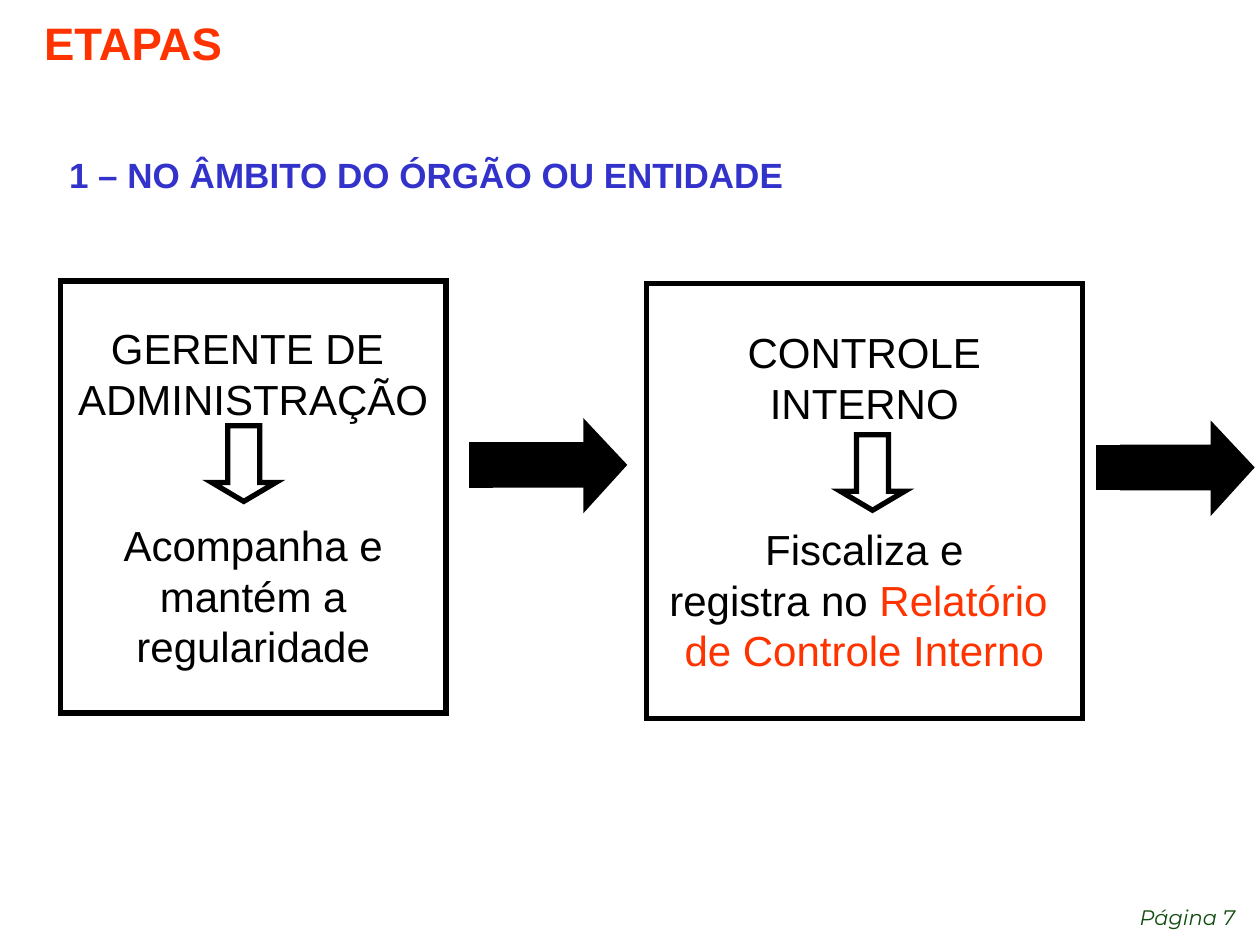
from lxml.etree import SubElement
from pptx import Presentation
from pptx.dml.color import RGBColor
from pptx.enum.shapes import MSO_SHAPE
from pptx.enum.text import MSO_ANCHOR, MSO_AUTO_SIZE, PP_ALIGN
from pptx.oxml.ns import qn
from pptx.util import Inches, Pt

theme = {
    "black": RGBColor.from_string("000000"),
    "red": RGBColor.from_string("FF3300"),
    "blue": RGBColor.from_string("3333CC"),
    "green": RGBColor.from_string("0F4C0E"),
    "title": Pt(26),
    "heading": Pt(20),
    "body": Pt(24),
    "page": Pt(12),
    "line": Pt(3),
    "gap": Pt(55),
}


def set_font(paragraph, size, color, name="Arial", bold=False, italic=False):
    font = paragraph.font
    font.name, font.size, font.bold, font.italic = name, size, bold, italic
    font.color.rgb = color


def outline(shape):
    shape.shadow.inherit = False
    shape.line.color.rgb = theme["black"]
    shape.line.width = theme["line"]
    SubElement(shape.line._get_or_add_ln(), qn("a:miter"), lim="800000")


prs = Presentation()
prs.slide_width, prs.slide_height = Inches(10), Inches(7.5)
slide = prs.slides.add_slide(prs.slide_layouts[5])
shapes = slide.shapes

title = shapes.title
title.left, title.top, title.width, title.height = Inches(0.25), Inches(0), Inches(8.08), Inches(0.67)
title.text_frame.text = "ETAPAS"
title.text_frame.vertical_anchor = MSO_ANCHOR.MIDDLE
title.text_frame.paragraphs[0].alignment = PP_ALIGN.LEFT
set_font(title.text_frame.paragraphs[0], theme["title"], theme["red"], bold=True)

page = shapes.add_textbox(Inches(8.33), Inches(7.09), Inches(1.57), Inches(0.32)).text_frame
page.word_wrap = True
page.text = "Página 7"
page.paragraphs[0].alignment = PP_ALIGN.RIGHT
page.paragraphs[0].line_spacing = 1.2
set_font(page.paragraphs[0], theme["page"], theme["green"], name="Montserrat", italic=True)

heading = shapes.add_textbox(Inches(0.45), Inches(1.17), Inches(6.17), Inches(0.43)).text_frame
heading.word_wrap = True
heading.auto_size = MSO_AUTO_SIZE.SHAPE_TO_FIT_TEXT
heading.text = "1 – NO ÂMBITO DO ÓRGÃO OU ENTIDADE"
set_font(heading.paragraphs[0], theme["heading"], theme["blue"], bold=True)

stages = [
    {
        "box": (0.48, 2.23, 3.06, 3.43),
        "down": (1.68, 3.38),
        "next": (3.74, 3.37),
        "who": ["GERENTE DE ", "ADMINISTRAÇÃO"],
        "task": [[("Acompanha e", "black")], [("mantém a", "black")], [("regularidade", "black")]],
    },
    {
        "box": (5.13, 2.25, 3.46, 3.45),
        "down": (6.67, 3.45),
        "next": (8.72, 3.39),
        "who": ["CONTROLE", "INTERNO"],
        "task": [
            [("Fiscaliza e", "black")],
            [("registra no ", "black"), ("Relatório ", "red")],
            [("de Controle Interno", "red")],
        ],
    },
]

arrow_head = [(0.91, 0), (0.91, 0.16), (0.19, 0.16), (0.19, 0.48), (0.91, 0.48), (0.91, 0.65), (1.21, 0.32)]
stripes = [[(x1, 0.16), (x1, 0.48), (x2, 0.48), (x2, 0.16)] for x1, x2 in ((0.07, 0.15), (0, 0.04))]

for stage in stages:
    box = shapes.add_shape(MSO_SHAPE.RECTANGLE, *map(Inches, stage["box"]))
    box.fill.background()
    outline(box)
    frame = box.text_frame
    frame.word_wrap = False
    frame.vertical_anchor = MSO_ANCHOR.MIDDLE
    lines = [[(who, "black")] for who in stage["who"]] + stage["task"]
    for index, line in enumerate(lines):
        paragraph = frame.add_paragraph() if index else frame.paragraphs[0]
        paragraph.alignment = PP_ALIGN.CENTER
        if index == len(stage["who"]):
            paragraph.space_before = theme["gap"]
        set_font(paragraph, theme["body"], theme[line[0][1]])
        for words, color in line:
            run = paragraph.add_run()
            run.text = words
            if color != line[0][1]:
                run.font.color.rgb = theme[color]

    down = shapes.add_shape(MSO_SHAPE.DOWN_ARROW, *map(Inches, stage["down"]), Inches(0.51), Inches(0.6))
    down.adjustments[0], down.adjustments[1] = 0.5, 0.295
    down.fill.background()
    outline(down)

    left, top = stage["next"]
    contours = [[(Inches(left + x), Inches(top + y)) for x, y in part] for part in [arrow_head] + stripes]
    builder = shapes.build_freeform(*contours[0][0])
    builder.add_line_segments(contours[0][1:])
    for contour in contours[1:]:
        builder.move_to(*contour[0])
        builder.add_line_segments(contour[1:])
    next_arrow = builder.convert_to_shape()
    next_arrow.fill.solid()
    next_arrow.fill.fore_color.rgb = theme["black"]
    outline(next_arrow)

prs.save("out.pptx")
